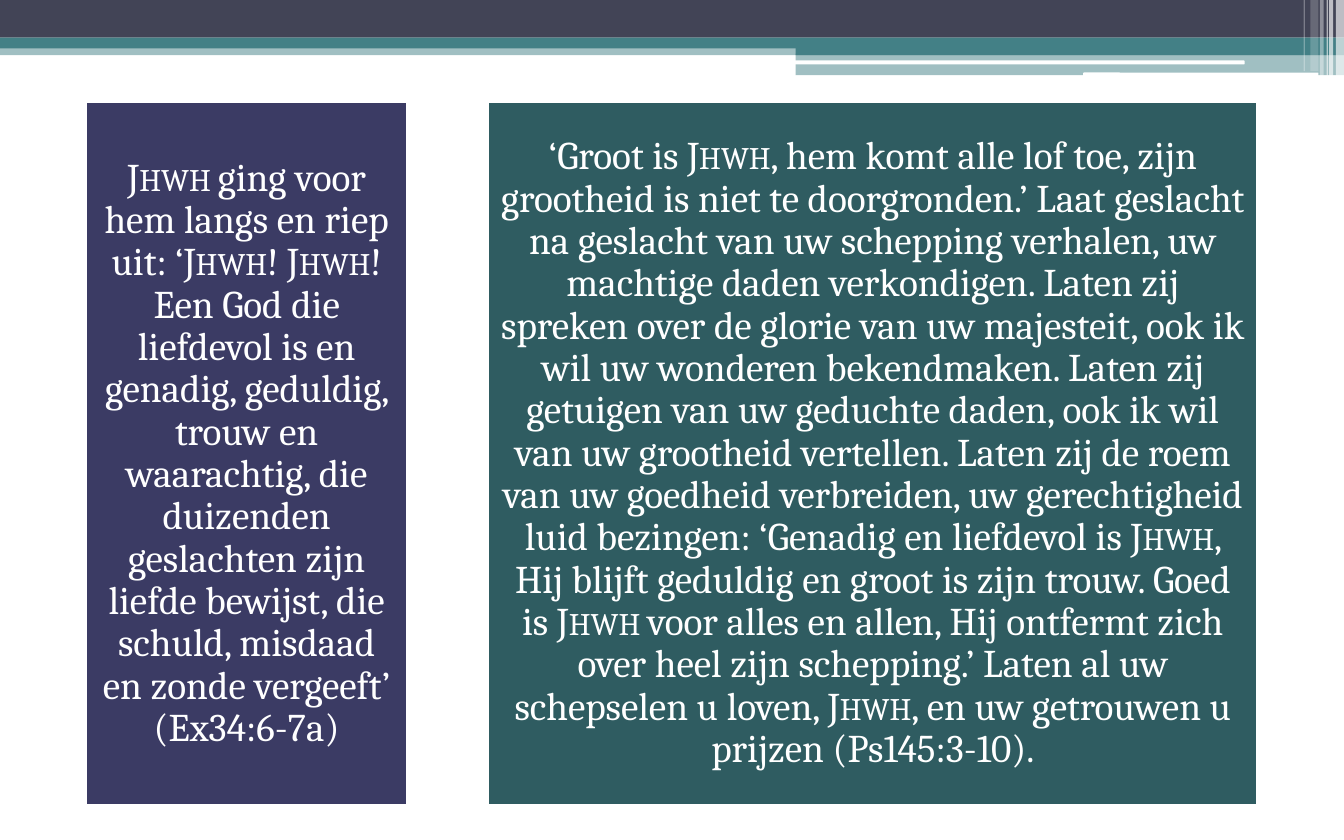
"""Build a slide with two Bible quotations side by side under a banded header."""
import pptx
import pptx.util
import pptx.dml.color
import pptx.enum.shapes
import pptx.enum.text
import pptx.oxml
import pptx.oxml.ns

Inches = pptx.util.Inches
Pt = pptx.util.Pt
RECT = pptx.enum.shapes.MSO_SHAPE.RECTANGLE
ROUNDED = pptx.enum.shapes.MSO_SHAPE.ROUNDED_RECTANGLE

COLORS = {"slate": "424456", "teal": "438086", "white": "FFFFFF",
          "indigo": "3B3B64", "petrol": "2F5C61"}

# Parts between bars are set in small capitals.
QUOTES = [
    (0.64, 2.39, "indigo",
     "|Jhwh |ging voor hem langs en riep uit: ‘|Jhwh|! |Jhwh|! Een God die liefdevol is en "
     "genadig, geduldig, trouw en waarachtig, die duizenden geslachten zijn liefde bewijst, "
     "die schuld, misdaad en zonde vergeeft’ (Ex34:6-7a)"),
    (3.63, 5.73, "petrol",
     "‘Groot is |Jhwh|, hem komt alle lof toe, zijn grootheid is niet te doorgronden.’ Laat "
     "geslacht na geslacht van uw schepping verhalen, uw machtige daden verkondigen. Laten zij "
     "spreken over de glorie van uw majesteit, ook ik wil uw wonderen bekendmaken. Laten zij "
     "getuigen van uw geduchte daden, ook ik wil van uw grootheid vertellen. Laten zij de roem "
     "van uw goedheid verbreiden, uw gerechtigheid luid bezingen: ‘Genadig en liefdevol is "
     "|Jhwh|, Hij blijft geduldig en groot is zijn trouw. Goed is |Jhwh |voor alles en allen, "
     "Hij ontfermt zich over heel zijn schepping.’ Laten al uw schepselen u loven, |Jhwh|, en "
     "uw getrouwen u prijzen (Ps145:3-10)."),
]
QUOTE_TOP, QUOTE_HEIGHT = 0.76, 5.23

BANDS = [
    (0, 0.33, 10, 0.08, "teal", 50),
    (0, 0, 10, 0.28, "slate", 100),
    (0, 0.28, 10, 0.08, "teal", 100),
    (5.92, 0.33, 4.08, 0.08, "teal", 100),
    (5.92, 0.4, 4.08, 0.16, "teal", 50),
]
GROOVES = [(5.91, 0.45, 3.35, 0.03), (8.06, 0.54, 1.75, 0.03)]
STRIPES = [(9.94, 0.06, 0.57, 65), (9.89, 0.03, 0.57, 65), (9.87, 0.01, 0.57, 60),
           (9.82, 0.03, 0.57, 40), (9.75, 0.06, 0.53, 20), (9.7, 0.01, 0.53, 30)]


def rgb(color):
    return pptx.dml.color.RGBColor.from_string(COLORS[color])


def add_block(slide, left, top, width, height, color, opacity=100, preset=RECT):
    block = slide.shapes.add_shape(preset, *map(Inches, (left, top, width, height)))
    block.shadow.inherit = False
    block.fill.solid()
    block.fill.fore_color.rgb = rgb(color)
    block.line.fill.background()
    if opacity < 100:
        srgb = block.fill._xPr.find(".//" + pptx.oxml.ns.qn("a:srgbClr"))
        srgb.append(pptx.oxml.parse_xml(
            f'<a:alpha {pptx.oxml.ns.nsdecls("a")} val="{opacity * 1000}"/>'))
    return block


def write_text(block, text, size=21, font="Cambria", color="white", inset=0.09):
    frame = block.text_frame
    frame.word_wrap = True
    frame.vertical_anchor = pptx.enum.text.MSO_ANCHOR.MIDDLE
    frame.margin_left = frame.margin_right = Inches(inset)
    frame.margin_top = frame.margin_bottom = Inches(inset)
    paragraph = frame.paragraphs[0]
    paragraph.alignment = pptx.enum.text.PP_ALIGN.CENTER
    paragraph.line_spacing = 0.9
    paragraph.space_after = Pt(size * 0.35)
    for index, part in enumerate(text.split("|")):
        if part:
            run = paragraph.add_run()
            run.text = part
            run.font.size = Pt(size)
            run.font.name = font
            run.font.color.rgb = rgb(color)
            if index % 2:
                run.font._element.set("cap", "small")


def main():
    deck = pptx.Presentation()
    deck.slide_width, deck.slide_height = Inches(10), Inches(6.25)
    slide = deck.slides.add_slide(deck.slide_layouts[6])
    for band in BANDS:
        add_block(slide, *band)
    for groove in GROOVES:
        add_block(slide, *groove, "white", preset=ROUNDED)
    for left, width, height, opacity in STRIPES:
        add_block(slide, left, 0, width, height, "white", opacity)
    for left, width, color, quote in QUOTES:
        panel = add_block(slide, left, QUOTE_TOP, width, QUOTE_HEIGHT, color)
        panel.line.color.rgb = rgb("white")
        panel.line.width = Pt(1.5)
        write_text(panel, quote)
    deck.save("out.pptx")


if __name__ == "__main__":
    main()
